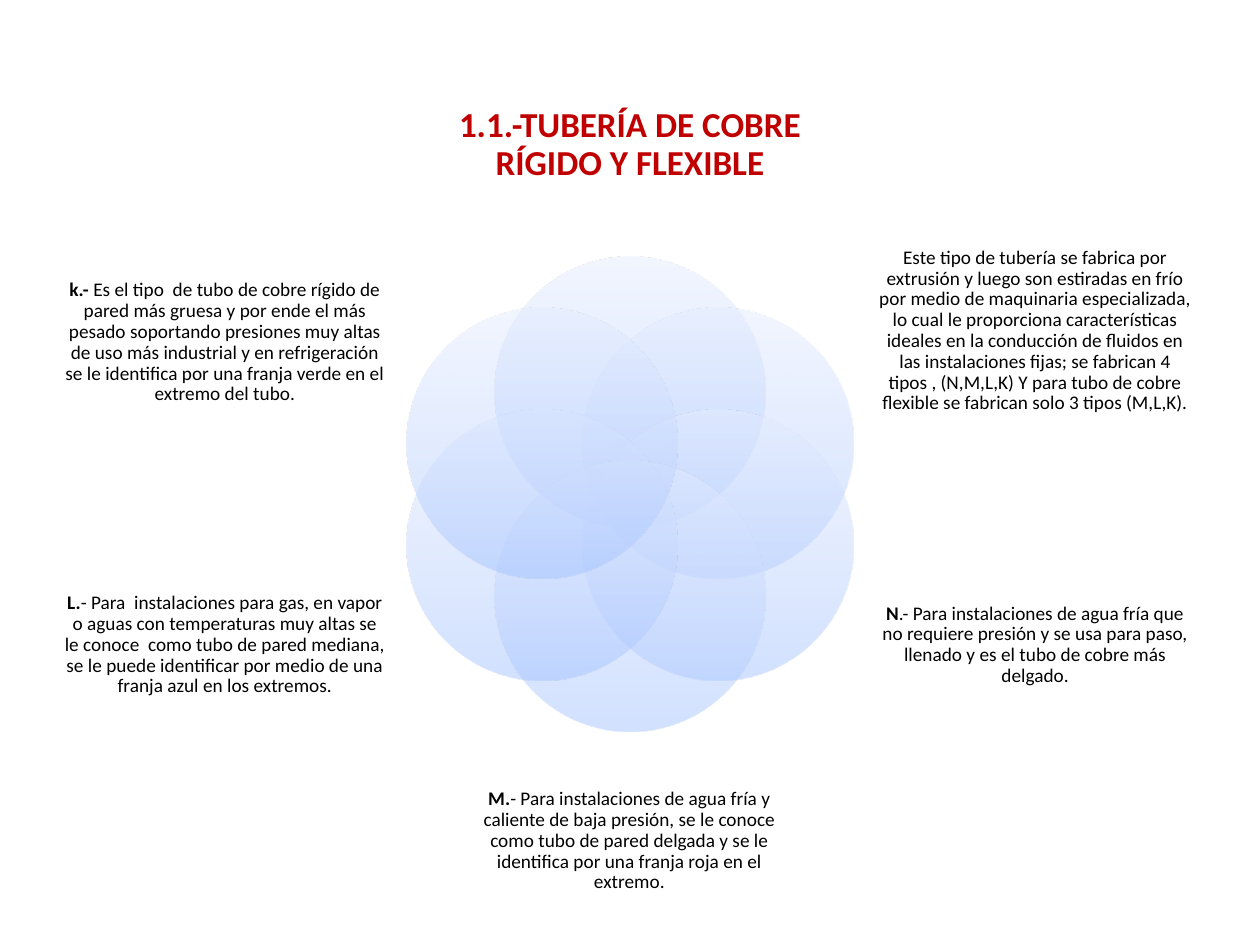
from math import cos, radians, sin

from lxml.etree import SubElement
from pptx import Presentation
from pptx.dml.color import RGBColor
from pptx.enum.shapes import MSO_SHAPE as Shape
from pptx.enum.text import MSO_ANCHOR as Anchor, PP_ALIGN as Align
from pptx.oxml.ns import qn
from pptx.util import Inches, Pt

RED = RGBColor(0xC0, 0x00, 0x00)
BLACK = RGBColor(0x00, 0x00, 0x00)
DEEP = RGBColor(0xA4, 0xC4, 0xFF)
MID = RGBColor(0xBF, 0xD4, 0xFF)
PALE = RGBColor(0xE6, 0xEE, 0xFF)
STOPS = [(0, DEEP), (35, MID), (100, PALE)]

SIZE = 2.15
RING = 0.81
MID_X, MID_Y = 5, 3.92
LEFT, RIGHT = 0.51, 6.94
HIGH, LOW = 1.82, 4.22
WIDE = 2.55

deck = Presentation()
deck.slide_width = Inches(10)
deck.slide_height = Inches(7.5)
slide = deck.slides.add_slide(deck.slide_layouts[6])


def add_text(text, box, lead="", size=11, color=BLACK, bold=False):
    frame = slide.shapes.add_textbox(*map(Inches, box)).text_frame
    frame.word_wrap = True
    frame.vertical_anchor = Anchor.MIDDLE
    frame.margin_left = frame.margin_right = 0
    frame.margin_top = frame.margin_bottom = 0
    para = frame.paragraphs[0]
    para.alignment = Align.CENTER
    para.line_spacing = 0.9
    for words, heavy in ((lead, True), (text, bold)):
        if words:
            run = para.add_run()
            run.text = words
            run.font.name = "Calibri"
            run.font.size = Pt(size)
            run.font.bold = heavy
            run.font.color.rgb = color


def add_petal(turn):
    left = MID_X + RING * sin(radians(turn)) - SIZE / 2
    top = MID_Y - RING * cos(radians(turn)) - SIZE / 2
    petal = slide.shapes.add_shape(
        Shape.OVAL, Inches(left), Inches(top), Inches(SIZE), Inches(SIZE)
    )
    petal.shadow.inherit = False
    petal.line.fill.background()
    petal.fill.gradient()
    petal.fill.gradient_angle = 90
    stops = petal.element.spPr.find(".//" + qn("a:gsLst"))
    for old in list(stops):
        stops.remove(old)
    for place, color in STOPS:
        stop = SubElement(stops, qn("a:gs"), pos=str(place * 1000))
        tint = SubElement(stop, qn("a:srgbClr"), val=str(color))
        SubElement(tint, qn("a:alpha"), val="50000")


notes = [
    ("", "Este tipo de tubería se fabrica por extrusión y luego son estiradas en frío "
     "por medio de maquinaria especializada, lo cual le proporciona características "
     "ideales en la conducción de fluidos en las instalaciones fijas; se fabrican 4 "
     "tipos , (N,M,L,K) Y para tubo de cobre flexible se fabrican solo 3 tipos (M,L,K).",
     (RIGHT, HIGH, WIDE, 1.61)),
    ("N", ".- Para instalaciones de agua fría que no requiere presión y se usa para "
     "paso, llenado y es el tubo de cobre más delgado.",
     (RIGHT, LOW, WIDE, 1.8)),
    ("M.", "- Para instalaciones de agua fría y caliente de baja presión, se le conoce "
     "como tubo de pared delgada y se le identifica por una franja roja en el extremo.",
     (3.65, 5.94, 2.69, 1.47)),
    ("L.", "- Para  instalaciones para gas, en vapor o aguas con temperaturas muy altas "
     "se le conoce  como tubo de pared mediana, se le puede identificar por medio de una "
     "franja azul en los extremos.",
     (LEFT, LOW, WIDE, 1.8)),
    ("k.- ", "Es el tipo  de tubo de cobre rígido de pared más gruesa y por ende el más "
     "pesado soportando presiones muy altas de uso más industrial y en refrigeración se "
     "le identifica por una franja verde en el extremo del tubo.",
     (LEFT, HIGH, WIDE, 1.8)),
]

add_petal(0)
add_text("1.1.-TUBERÍA DE COBRE RÍGIDO Y FLEXIBLE", (3.19, 0.42, 3.62, 1.47),
         size=20, color=RED, bold=True)
for step, (lead, text, box) in enumerate(notes, 1):
    add_petal(step * 60)
    add_text(text, box, lead=lead)

deck.save("out.pptx")
